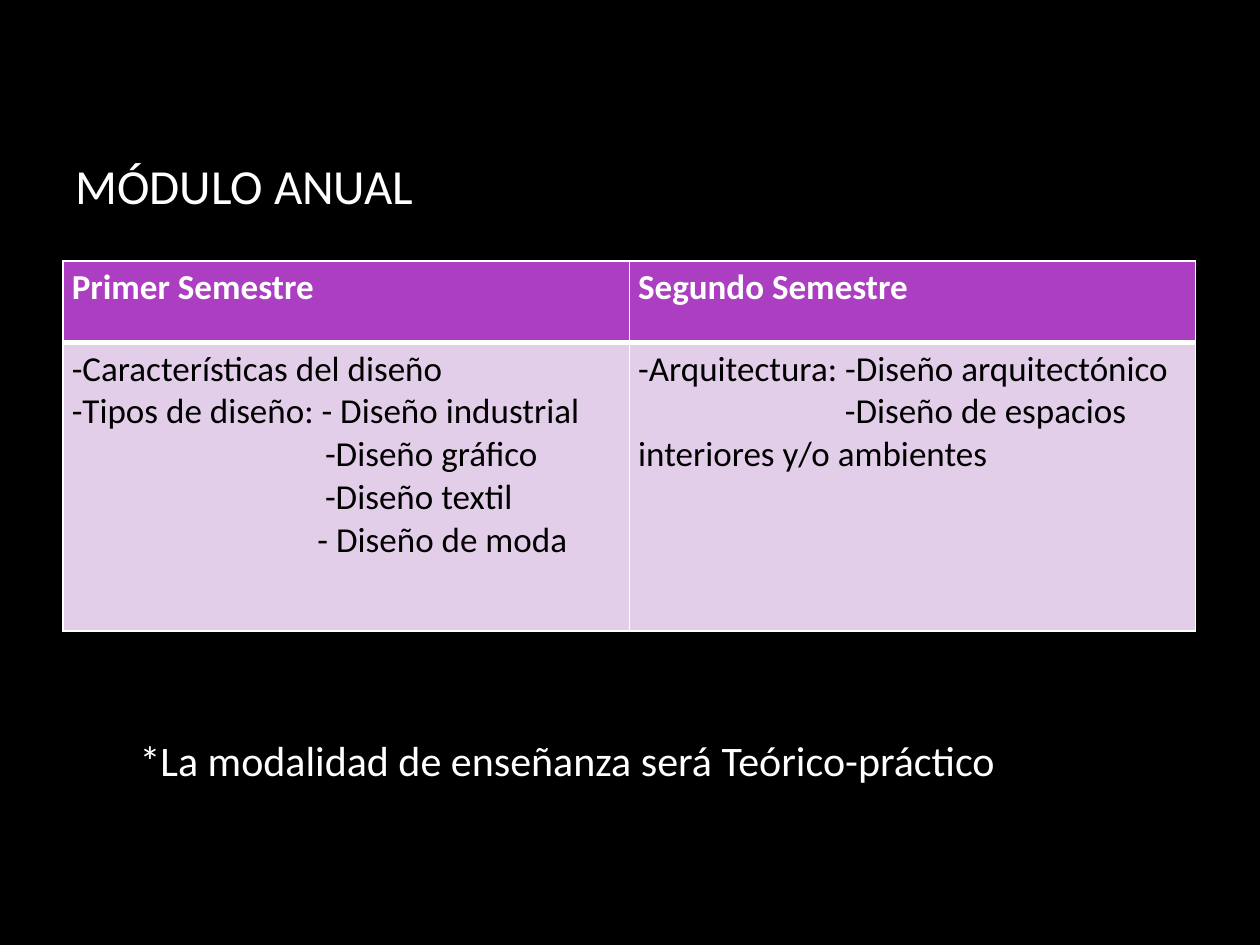
from lxml.etree import SubElement as Sub
from pptx import Presentation
from pptx.dml.color import RGBColor as Color
from pptx.enum.text import MSO_ANCHOR as Anchor
from pptx.oxml.ns import qn
from pptx.util import Inches, Pt

# Content: each body line is (text, first-line indent in inches)
TITLE = "MÓDULO ANUAL"
HEADS = ["Primer Semestre", "Segundo Semestre"]
BODIES = [
    [
        ("-Características del diseño", 0),
        ("-Tipos de diseño: - Diseño industrial", 0),
        ("-Diseño gráfico", 2.01),
        ("-Diseño textil", 2.01),
        ("- Diseño de moda", 1.95),
    ],
    [
        ("-Arquitectura: -Diseño arquitectónico", 0),
        ("-Diseño de espacios interiores y/o ambientes", 1.64),
    ],
]
NOTE = "*La modalidad de enseñanza será Teórico-práctico"

THEME = {
    "font": "Calibri", "back": "000000", "light": "FFFFFF", "dark": "000000",
    "head": "AC3EC1", "body": "E3CEE9",
    "title": 28, "cell": 20, "note": 24,
}
WIDTH = 8.99
ROWS = [0.65, 2.29]


def write(frame, lines, size, color="light", bold=False):
    """Fill a text frame with (text, first-line indent) pairs."""
    frame.word_wrap = True
    for i, (text, indent) in enumerate(lines):
        para = frame.add_paragraph() if i else frame.paragraphs[0]
        if indent:
            para._p.get_or_add_pPr().set("indent", str(Inches(indent)))
        run = para.add_run()
        run.text = text
        font = run.font
        font.name, font.size, font.bold = THEME["font"], Pt(THEME[size]), bold
        font.color.rgb = Color.from_string(THEME[color])


def label(slide, box, text, size, anchor):
    frame = slide.shapes.add_textbox(*map(Inches, box)).text_frame
    frame.vertical_anchor = anchor
    write(frame, [(text, 0)], size)


def edge(cell, widths):
    """Draw the cell borders; widths maps L, R, T, B to points."""
    props = cell._tc.get_or_add_tcPr()
    for side, width in widths.items():
        line = Sub(props, qn(f"a:ln{side}"), w=str(Pt(width)))
        Sub(Sub(line, qn("a:solidFill")), qn("a:srgbClr"), val=THEME["light"])


def style(cell, fill, top, base):
    edge(cell, {"L": 1, "R": 1, "T": top, "B": base})
    cell.fill.solid()
    cell.fill.fore_color.rgb = Color.from_string(THEME[fill])
    cell.margin_left = cell.margin_right = Inches(0.07)
    cell.margin_top = cell.margin_bottom = Inches(0.04)


def main():
    deck = Presentation()
    deck.slide_width, deck.slide_height = Inches(10), Inches(7.5)
    slide = deck.slides.add_slide(deck.slide_layouts[6])
    back = slide.background.fill
    back.solid()
    back.fore_color.rgb = Color.from_string(THEME["back"])

    # Title
    label(slide, (0.5, 0.67, 8.5, 1.59), TITLE, "title", Anchor.MIDDLE)

    # Semester table
    box = map(Inches, (0.5, 2.07, WIDTH, sum(ROWS)))
    grid = slide.shapes.add_table(len(ROWS), len(HEADS), *box).table
    grid.horz_banding = False
    for row, height in zip(grid.rows, ROWS):
        row.height = Inches(height)
    for i, (head, body) in enumerate(zip(HEADS, BODIES)):
        grid.columns[i].width = Inches(WIDTH / len(HEADS))
        top, low = grid.cell(0, i), grid.cell(1, i)
        style(top, "head", 1, 3)
        style(low, "body", 3, 1)
        write(top.text_frame, [(head, 0)], "cell", bold=True)
        write(low.text_frame, body, "cell", color="dark")

    # Closing note
    label(slide, (1.01, 5.78, 8.8, 0.5), NOTE, "note", Anchor.TOP)
    deck.save("out.pptx")


if __name__ == "__main__":
    main()
